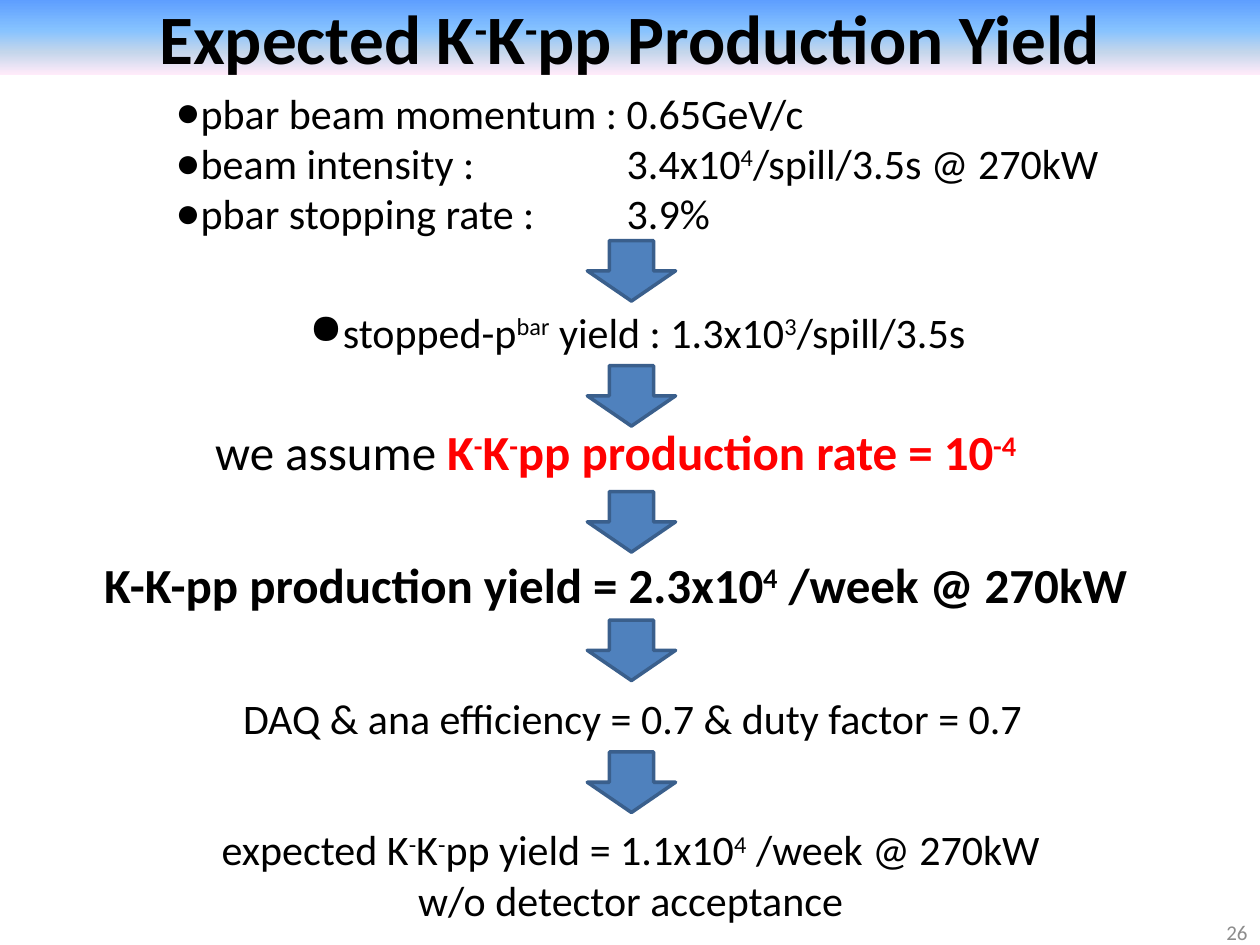
"""Build the slide on the expected K-K-pp production yield."""

from lxml.etree import SubElement
from pptx import Presentation
from pptx.dml.color import RGBColor
from pptx.enum.shapes import MSO_SHAPE
from pptx.enum.text import MSO_ANCHOR, MSO_AUTO_SIZE, PP_ALIGN
from pptx.oxml.ns import qn
from pptx.util import Cm, Pt

THEME = {
    "font": "Calibri",
    "title": 39.6, "text": 24, "large": 28, "small": 12,
    "ink": "000000", "accent": "FF0000", "muted": "8C8C8C",
    "arrow": "4F81BD", "edge": "3A5F8C",
    "gradient": [(0, "5E9EFF"), (40, "85C2FF"), (70, "C4D6EB"), (100, "FFEBFA")],
}

# A caret opens and closes a superscript.
TITLE = "Expected K^-^K^-^pp Production Yield"
CONDITIONS = [
    "pbar beam momentum :\t0.65GeV/c",
    "beam intensity :\t3.4x10^4^/spill/3.5s @ 270kW",
    "pbar stopping rate :\t3.9%",
]
STOPPED = ["stopped-p^bar^ yield : 1.3x10^3^/spill/3.5s"]
ASSUMPTION = [[("we assume ", "ink", False),
               ("K^-^K^-^pp production rate = 10^-4^", "accent", True)]]
PRODUCTION = [[("K-K-pp production yield = 2.3x10^4^ /week @ 270kW", "ink", True)]]
EFFICIENCY = ["DAQ & ana efficiency = 0.7 & duty factor = 0.7"]
EXPECTED = ["expected K^-^K^-^pp yield = 1.1x10^4^ /week @ 270kW",
            "w/o detector acceptance"]
PAGE_NUMBER = ["26"]

STEPS = [
    (STOPPED, (5.99, 6.05, 13.94, 1.27), "text", PP_ALIGN.LEFT, True),
    (ASSUMPTION, (4.09, 8.38, 17.22, 1.45), "large", PP_ALIGN.LEFT, False),
    (PRODUCTION, (1.85, 11.05, 21.49, 1.45), "large", PP_ALIGN.LEFT, False),
    (EFFICIENCY, (4.65, 13.84, 16.38, 1.27), "text", PP_ALIGN.LEFT, False),
    (EXPECTED, (4.09, 16.48, 17.25, 2.31), "text", PP_ALIGN.CENTER, False),
]
ARROW_TOPS = [4.85, 7.37, 9.91, 12.5, 15.16]
ARROW_WIDTH, ARROW_HEIGHT = 1.78, 1.22
PAGE_WIDTH, PAGE_HEIGHT = 25.4, 19.05
BULLET_INDENT, VALUE_COLUMN = 0.5, 9.1


def place(shape, area):
    shape.left, shape.top, shape.width, shape.height = map(Cm, area)


def add_spans(paragraph, text, color, bold):
    for index, part in enumerate(text.split("^")):
        if part:
            span = paragraph.add_run()
            span.text = part
            span.font.color.rgb = RGBColor.from_string(THEME[color])
            if bold:
                span.font.bold = True
            if index % 2:
                span.font._element.set("baseline", "30000")


def add_bullet(paragraph):
    properties = paragraph._p.get_or_add_pPr()
    properties.set("marL", str(Cm(BULLET_INDENT)))
    properties.set("indent", str(-Cm(BULLET_INDENT)))
    SubElement(properties, qn("a:buChar"), char="●")
    tabs = SubElement(properties, qn("a:tabLst"))
    SubElement(tabs, qn("a:tab"), pos=str(Cm(VALUE_COLUMN)), algn="l")


def write(box, lines, size, align, color="ink", bold=False, bullets=False):
    frame = box.text_frame
    for index, line in enumerate(lines):
        paragraph = frame.add_paragraph() if index else frame.paragraphs[0]
        paragraph.alignment = align
        paragraph.space_before = Pt(0)
        if bullets:
            add_bullet(paragraph)
        paragraph.font.name = THEME["font"]
        paragraph.font.size = Pt(THEME[size])
        spans = [(line, color, bold)] if isinstance(line, str) else line
        for span in spans:
            add_spans(paragraph, *span)


def fit_to_text(box):
    box.text_frame.word_wrap = False
    box.text_frame.auto_size = MSO_AUTO_SIZE.SHAPE_TO_FIT_TEXT


def fill_gradient(shape):
    gradient = SubElement(shape._element.spPr, qn("a:gradFill"), rotWithShape="1")
    stops = SubElement(gradient, qn("a:gsLst"))
    for position, color in THEME["gradient"]:
        stop = SubElement(stops, qn("a:gs"), pos=str(position * 1000))
        SubElement(stop, qn("a:srgbClr"), val=color)
    SubElement(gradient, qn("a:lin"), ang="5400000", scaled="0")


def add_arrow(page, top):
    left = (PAGE_WIDTH - ARROW_WIDTH) / 2 + 0.03
    arrow = page.shapes.add_shape(
        MSO_SHAPE.DOWN_ARROW, *map(Cm, (left, top, ARROW_WIDTH, ARROW_HEIGHT)))
    arrow.shadow.inherit = False
    arrow.fill.solid()
    arrow.fill.fore_color.rgb = RGBColor.from_string(THEME["arrow"])
    arrow.line.color.rgb = RGBColor.from_string(THEME["edge"])
    arrow.line.width = Pt(2)


def main():
    deck = Presentation()
    deck.slide_width, deck.slide_height = Cm(PAGE_WIDTH), Cm(PAGE_HEIGHT)
    page = deck.slides.add_slide(deck.slide_layouts[1])

    title, body = page.shapes.title, page.placeholders[1]
    place(title, (0, 0, PAGE_WIDTH, 1.5))
    fill_gradient(title)
    title.text_frame.auto_size = MSO_AUTO_SIZE.NONE
    title.text_frame.vertical_anchor = MSO_ANCHOR.MIDDLE
    write(title, [TITLE], "title", PP_ALIGN.CENTER, bold=True)

    place(body, (3.28, 1.63, 19.41, 3.33))
    fit_to_text(body)
    write(body, CONDITIONS, "text", PP_ALIGN.LEFT, bullets=True)

    for top, (lines, area, size, align, bullets) in zip(ARROW_TOPS, STEPS):
        add_arrow(page, top)
        box = page.shapes.add_textbox(*map(Cm, area))
        fit_to_text(box)
        write(box, lines, size, align, bullets=bullets)

    number = page.shapes.add_textbox(*map(Cm, (19.48, 18.29, 5.92, 1.02)))
    number.text_frame.vertical_anchor = MSO_ANCHOR.MIDDLE
    number.text_frame.word_wrap = True
    write(number, PAGE_NUMBER, "small", PP_ALIGN.RIGHT, color="muted")

    deck.save("out.pptx")


if __name__ == "__main__":
    main()
